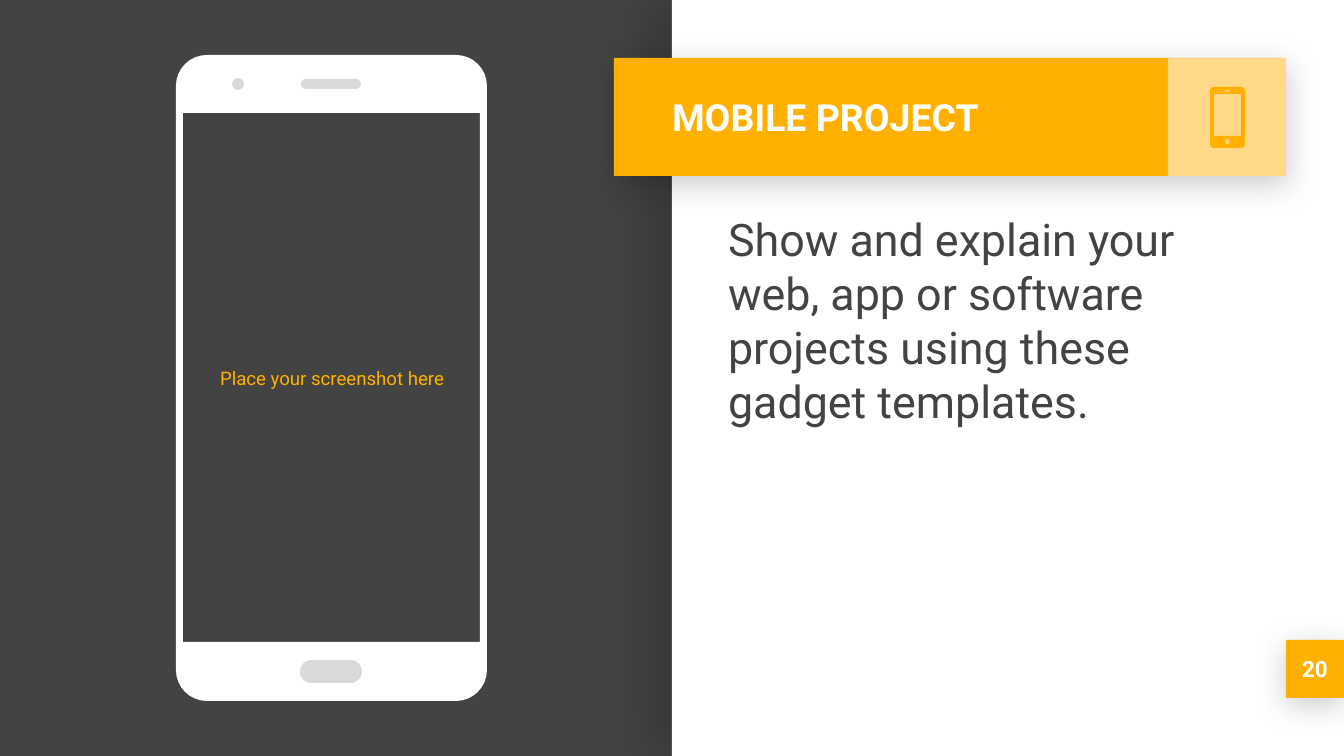
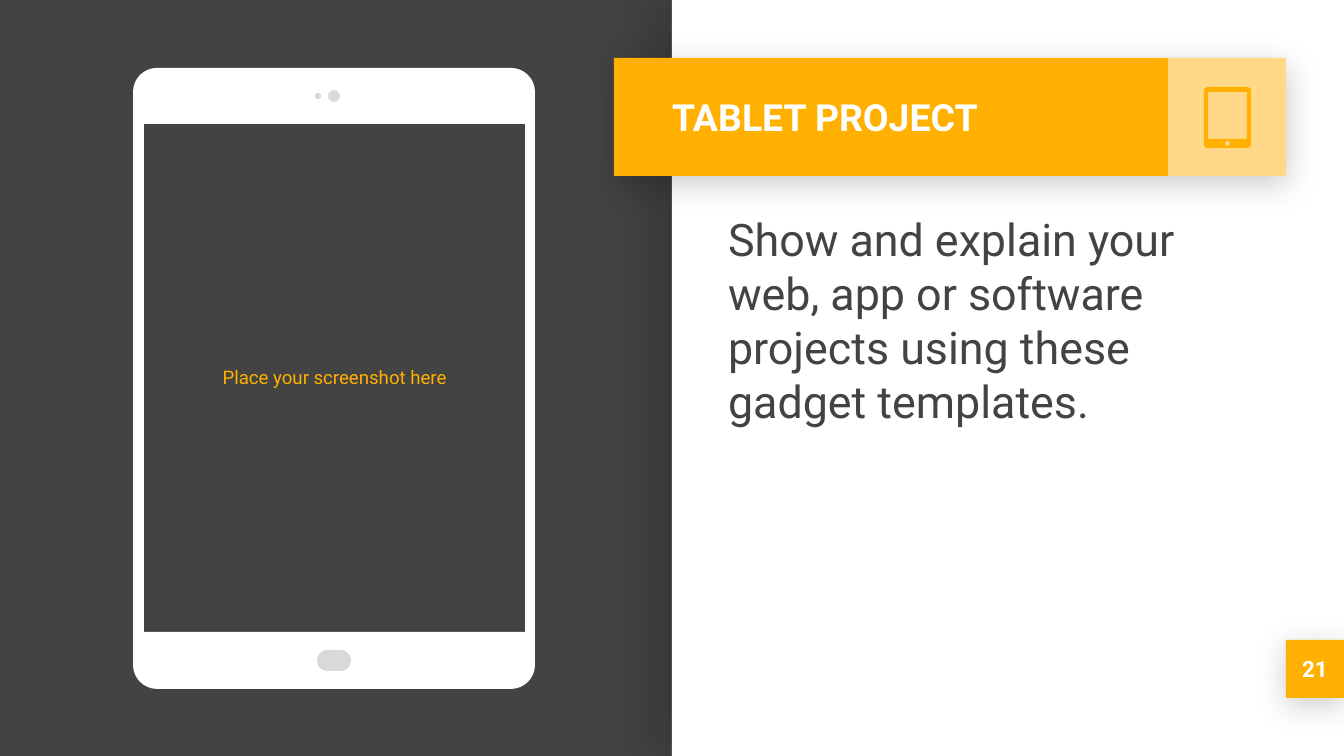
from math import cos, pi, sin

from lxml.etree import SubElement
from pptx import Presentation
from pptx.dml.color import RGBColor
from pptx.enum.shapes import MSO_SHAPE as Preset
from pptx.enum.text import MSO_ANCHOR as Anchor, MSO_AUTO_SIZE as AutoSize, PP_ALIGN as Align
from pptx.oxml.ns import qn
from pptx.util import Pt

EMU_PER_PX = 914400 / 134.4
FONT = "Roboto"
INSET = 13
COLORS = {"dark": "434343", "white": "FFFFFF", "amber": "FFB000",
          "grey": "D9D9D9", "shadow": "000000"}

# Boxes are left, top, width, height in px.
SLIDE_SIZE = (1344, 756)
PANEL = (672, 0, 672, 756)
BAND = (614, 58, 672, 118)
ICON_TILE = (1168, 58, 118, 118)
TITLE = (659, 58, 508, 118)
BODY = (715, 199, 555, 431)
PAGE_NUMBER = (1286, 640, 58, 58)

# Shadows: opacity in percent, blur and distance in points, direction in degrees.
PANEL_SHADOW = (15, 22.5, 15, 180)
BAND_SHADOW = (20, 16.9, 3.8, 90)

EXPLANATION = "Show and explain your web, app or software projects using these gadget templates."
CAPTION = "Place your screenshot here"

# An outline is a list of (box, corner radius): the outer edge, then its holes.
PROJECTS = [
    {
        "title": "MOBILE PROJECT",
        "page": "20",
        "gadget": [((176, 55, 311, 646), 31), ((183, 113, 297, 529), 0)],
        "details": [(300, 660, 62, 23), (232, 78, 12, 12), (301, 79, 60, 10)],
        "caption_box": (184, 116, 296, 525),
        "icon": [((1210, 87, 35, 61), 4), ((1214, 94, 27, 42), 0),
                 ((1225, 90, 5, 2), 1), ((1225, 139, 5, 5), 2.5)],
    },
    {
        "title": "TABLET PROJECT",
        "page": "21",
        "gadget": [((133, 68, 402, 621), 24), ((144, 124, 381, 508), 0)],
        "details": [(317, 650, 34, 21), (315, 93, 6, 6), (328, 90, 12, 12)],
        "caption_box": (145, 125, 379, 505),
        "icon": [((1204, 87, 47, 61), 4), ((1208, 92, 39, 47), 0),
                 ((1225, 141, 5, 5), 2.5)],
    },
]


def px(length):
    return round(length * EMU_PER_PX)


def paint(shape, color, opacity=100):
    shape.shadow.inherit = False
    shape.fill.solid()
    shape.fill.fore_color.rgb = RGBColor.from_string(COLORS[color])
    shape.line.fill.background()
    if opacity < 100:
        tint = shape._element.spPr.find(qn("a:solidFill"))[0]
        SubElement(tint, qn("a:alpha"), val=str(opacity * 1000))
    return shape


def add_block(slide, box, color, preset=Preset.RECTANGLE, opacity=100):
    block = slide.shapes.add_shape(preset, *map(px, box))
    return paint(block, color, opacity)


def cast_shadow(shape, opacity, blur, distance, direction):
    effects = shape._element.spPr.find(qn("a:effectLst"))
    outer = SubElement(effects, qn("a:outerShdw"), blurRad=str(Pt(blur)), dist=str(Pt(distance)),
                       dir=str(direction * 60000), algn="bl", rotWithShape="0")
    tint = SubElement(outer, qn("a:srgbClr"), val=COLORS["shadow"])
    SubElement(tint, qn("a:alpha"), val=str(opacity * 1000))


def write(shape, text, size, color, bold=False, align=Align.LEFT, anchor=Anchor.MIDDLE):
    frame = shape.text_frame
    frame.word_wrap = True
    frame.auto_size = AutoSize.NONE
    frame.vertical_anchor = anchor
    frame.margin_left = frame.margin_right = px(INSET)
    frame.margin_top = frame.margin_bottom = px(INSET)
    paragraph = frame.paragraphs[0]
    paragraph.alignment = align
    run = paragraph.add_run()
    run.text = text
    run.font.name = FONT
    run.font.size = Pt(size)
    run.font.bold = bold
    run.font.color.rgb = RGBColor.from_string(COLORS[color])


def add_text(slide, box, text, **text_format):
    write(slide.shapes.add_textbox(*map(px, box)), text, **text_format)


def rounded_contour(box, radius, steps=8):
    """Points of a rectangle, clockwise from its top left, with each corner as an arc."""
    left, top, width, height = box
    right, bottom = left + width - radius, top + height - radius
    left, top = left + radius, top + radius
    centers = [(left, top), (right, top), (right, bottom), (left, bottom)]
    arc_steps = range(steps + 1) if radius else [0]
    points = []
    for corner, (x, y) in enumerate(centers):
        for step in arc_steps:
            angle = pi + (corner + step / steps) * pi / 2
            points.append((px(x + radius * cos(angle)), px(y + radius * sin(angle))))
    return points


def add_outline(slide, outline, color):
    (start, *edge), *holes = [rounded_contour(box, radius) for box, radius in outline]
    builder = slide.shapes.build_freeform(*start)
    builder.add_line_segments(edge, close=True)
    for start, *edge in holes:
        builder.move_to(*start)
        builder.add_line_segments(edge, close=True)
    paint(builder.convert_to_shape(), color)


def add_backdrop(slide, page):
    cast_shadow(add_block(slide, PANEL, "white"), *PANEL_SHADOW)
    number = add_block(slide, PAGE_NUMBER, "amber")
    cast_shadow(number, *BAND_SHADOW)
    write(number, page, size=12, color="white", bold=True, align=Align.CENTER)
    cast_shadow(add_block(slide, BAND, "amber"), *BAND_SHADOW)
    add_block(slide, ICON_TILE, "white", opacity=53)


def place_title(slide, text):
    title = slide.shapes.title
    title.left, title.top, title.width, title.height = map(px, TITLE)
    write(title, text, size=20, color="white", bold=True)
    slide.shapes._spTree.append(title._element)  # in front of the band


def add_gadget(slide, project):
    add_outline(slide, project["gadget"], "white")
    for box in project["details"]:
        detail = add_block(slide, box, "grey", Preset.ROUNDED_RECTANGLE)
        detail.adjustments[0] = 0.5
    add_text(slide, project["caption_box"], CAPTION, size=10, color="amber", align=Align.CENTER)


def main():
    deck = Presentation()
    deck.slide_width, deck.slide_height = map(px, SLIDE_SIZE)
    backdrop = deck.slide_master.background.fill
    backdrop.solid()
    backdrop.fore_color.rgb = RGBColor.from_string(COLORS["dark"])
    title_only = deck.slide_layouts[5]
    for project in PROJECTS:
        slide = deck.slides.add_slide(title_only)
        add_backdrop(slide, project["page"])
        place_title(slide, project["title"])
        add_text(slide, BODY, EXPLANATION, size=24, color="dark", anchor=Anchor.TOP)
        add_gadget(slide, project)
        add_outline(slide, project["icon"], "amber")
    deck.save("out.pptx")


if __name__ == "__main__":
    main()
